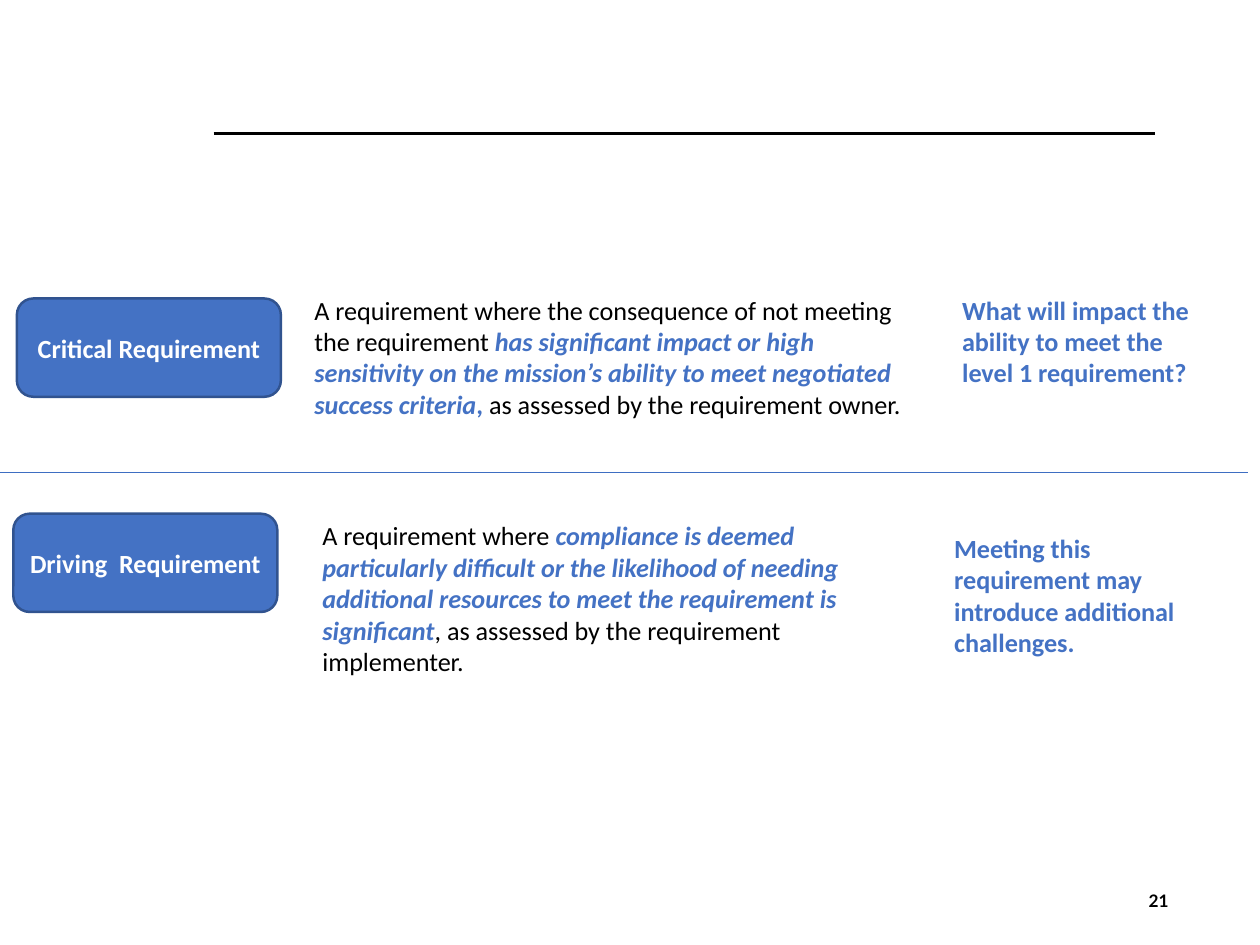
from lxml import etree
from pptx import Presentation
from pptx.dml.color import RGBColor
from pptx.enum.shapes import MSO_CONNECTOR, MSO_SHAPE
from pptx.enum.text import MSO_ANCHOR, PP_ALIGN
from pptx.oxml.ns import qn
from pptx.util import Inches, Pt

STRAIGHT = MSO_CONNECTOR.STRAIGHT
ROUND = MSO_SHAPE.ROUNDED_RECTANGLE
TOP, MIDDLE = MSO_ANCHOR.TOP, MSO_ANCHOR.MIDDLE
LEFT, CENTER, RIGHT = PP_ALIGN.LEFT, PP_ALIGN.CENTER, PP_ALIGN.RIGHT

WIDE, HIGH = 14.22, 10.67
BLUE, EDGE, RULE = "4472C4", "31538F", "3E6EC2"
BLACK, WHITE = "000000", "FFFFFF"
SIZE = 21.3
PLAIN = (BLACK, False, False)
STRONG = (BLUE, True, False)
STRESS = (BLUE, True, True)
LABEL = (WHITE, True, False)

ROWS = [
    {
        "box": (0.19, 3.27, 13.67, 1.54),
        "label": ("Critical Requirement", 0, 0.1),
        "body": (3.26, 0, 7.11, 1.54),
        "text": [
            ("A requirement where the consequence of not meeting the requirement ", PLAIN),
            ("has significant impact or high sensitivity on the mission’s ability "
             "to meet negotiated success criteria", STRESS),
            (", ", STRONG),
            ("as assessed by the requirement owner.", PLAIN),
        ],
        "note": (10.57, 0, 3.1, 1.18),
        "aside": ["What will impact the", "ability to meet the level 1 requirement?"],
    },
    {
        "box": (0.15, 5.8, 13.62, 1.92),
        "label": ("Driving  Requirement", 0, 0),
        "body": (3.39, 0.02, 6.72, 1.9),
        "text": [
            ("A requirement where ", PLAIN),
            ("compliance is deemed particularly difficult or the likelihood of needing "
             "additional resources to meet the requirement is significant", STRESS),
            (", as assessed by the requirement implementer.", PLAIN),
        ],
        "note": (10.52, 0.16, 3.1, 1.54),
        "aside": ["Meeting this requirement may introduce additional challenges."],
    },
]


def color(code):
    return RGBColor.from_string(code)


def style(font, look):
    code, font.bold, font.italic = look
    font.color.rgb = color(code)


def fill_text(shape, paras, size=SIZE, face="Calibri", align=LEFT, anchor=TOP, side=0.1):
    frame = shape.text_frame
    frame.word_wrap = True
    frame.vertical_anchor = anchor
    frame.margin_left = frame.margin_right = Inches(side)
    frame.margin_top = frame.margin_bottom = Inches(0.05)
    for i, runs in enumerate(paras):
        para = frame.add_paragraph() if i else frame.paragraphs[0]
        para.alignment = align
        para.font.size, para.font.name = Pt(size), face
        if len(runs) == 1:
            style(para.font, runs[0][1])
        for text, look in runs:
            run = para.add_run()
            run.text = text
            if len(runs) > 1:
                style(run.font, look)


def add_text(slide, box, paras, **opts):
    shape = slide.shapes.add_textbox(*map(Inches, box))
    fill_text(shape, paras, **opts)


def add_rule(slide, left, right, y, code, width):
    line = slide.shapes.add_connector(
        STRAIGHT, Inches(left), Inches(y), Inches(right), Inches(y))
    line.line.color.rgb = color(code)
    line.line.width = Pt(width)
    etree.SubElement(line._element.spPr, qn("a:effectLst"))


def add_label(slide, box, text):
    shape = slide.shapes.add_shape(ROUND, *map(Inches, box))
    shape.shadow.inherit = False
    shape.fill.solid()
    shape.fill.fore_color.rgb = color(BLUE)
    shape.line.color.rgb = color(EDGE)
    shape.line.width = Pt(2)
    fill_text(shape, [[(text, LABEL)]], align=CENTER, anchor=MIDDLE)


def add_row(slide, row):
    left, top, _, _ = row["box"]

    def place(part):
        x, y, w, h = part
        return left + x, top + y, w, h

    name, x, y = row["label"]
    add_label(slide, place((x, y, 2.98, 1.11)), name)
    add_text(slide, place(row["body"]), [row["text"]])
    add_text(slide, place(row["note"]), [[(text, STRONG)] for text in row["aside"]])


def main():
    deck = Presentation()
    deck.slide_width, deck.slide_height = Inches(WIDE), Inches(HIGH)
    slide = deck.slides.add_slide(deck.slide_layouts[6])
    add_rule(slide, 2.41, 13.04, 1.51, BLACK, 2)
    for row in ROWS:
        add_row(slide, row)
    add_rule(slide, 0, 14.09, HIGH / 2, RULE, 0.75)
    add_text(slide, (12.89, 10, 0.35, 0.34), [[("21", (BLACK, True, False))]],
             size=14, face="Lato", align=RIGHT, anchor=MIDDLE, side=0.05)
    deck.save("out.pptx")


if __name__ == "__main__":
    main()
